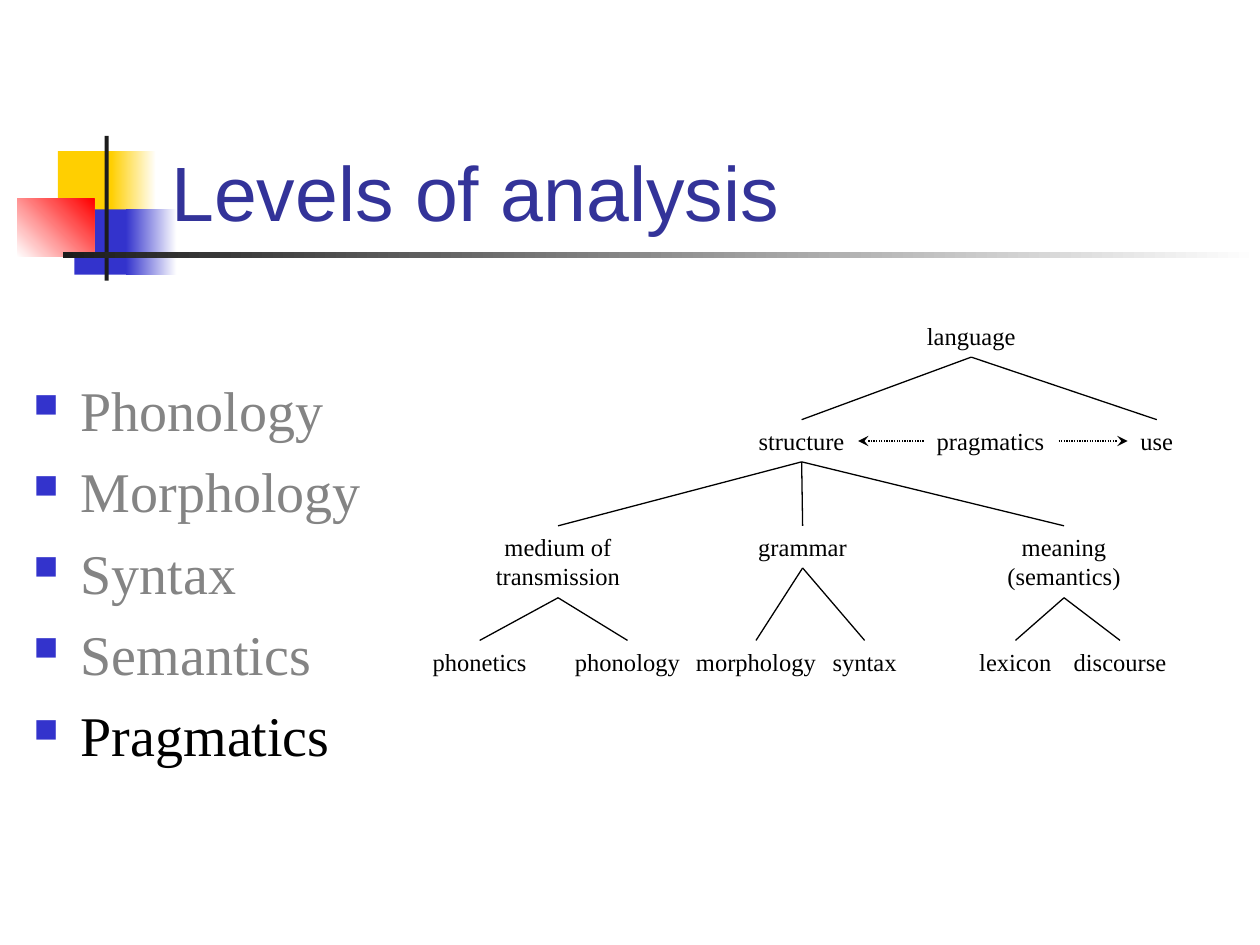
import dataclasses
import typing

import lxml.etree
import pptx
import pptx.dml.color
import pptx.enum.dml
import pptx.enum.shapes
import pptx.enum.text
import pptx.oxml.ns
import pptx.util

Cm = pptx.util.Cm
Pt = pptx.util.Pt
ALIGN = pptx.enum.text.PP_ALIGN
SERIF = "Times New Roman"


@dataclasses.dataclass
class Block:
    left: float
    top: float
    width: float
    height: float
    colors: tuple[str, ...]
    angle: float = 0


@dataclasses.dataclass
class Node:
    text: str
    center: float
    top: float
    width: float
    children: tuple["Node", ...] = ()

    @property
    def bottom(self) -> float:
        return self.top + 0.25 + 0.6 * len(self.text.split("\n"))


BLOCKS = [
    Block(1.17, 3.05, 1.22, 1.32, ("FFCF01",)),
    Block(2.24, 3.05, 0.91, 1.32, ("FFCF01", "FFFFFF")),
    Block(1.5, 4.22, 1.17, 1.32, ("3333CC",)),
    Block(2.54, 4.22, 1.02, 1.32, ("3333CC", "FFFFFF")),
    Block(0.35, 4.01, 1.55, 1.17, ("FFFFFF", "FF0000"), 45),
    Block(2.11, 2.74, 0.08, 2.92, ("1C1C1C",)),
    Block(1.27, 5.08, 24.13, 0.13, ("1C1C1C", "FFFFFF")),
]
TOPICS = {
    "Phonology": "848484",
    "Morphology": "848484",
    "Syntax": "848484",
    "Semantics": "848484",
    "Pragmatics": "000000",
}
LEVELS = (6.35, 8.46, 10.6, 12.91)

MEDIUM = Node("medium of\ntransmission", 11.25, LEVELS[2], 3.05, (
    Node("phonetics", 9.67, LEVELS[3], 2.41),
    Node("phonology", 12.65, LEVELS[3], 2.64),
))
GRAMMAR = Node("grammar", 16.18, LEVELS[2], 2.34, (
    Node("morphology", 15.24, LEVELS[3], 2.95),
    Node("syntax", 17.43, LEVELS[3], 1.83),
))
MEANING = Node("meaning\n(semantics)", 21.45, LEVELS[2], 2.82, (
    Node("lexicon", 20.47, LEVELS[3], 1.98),
    Node("discourse", 22.58, LEVELS[3], 2.39),
))
STRUCTURE = Node("structure", 16.16, LEVELS[1], 2.26, (MEDIUM, GRAMMAR, MEANING))
USE = Node("use", 23.32, LEVELS[1], 1.17)
LANGUAGE = Node("language", 19.58, LEVELS[0], 2.31, (STRUCTURE, USE))
PRAGMATICS = Node("pragmatics", 19.97, LEVELS[1], 2.69)


def rgb(color: str) -> pptx.dml.color.RGBColor:
    return pptx.dml.color.RGBColor.from_string(color)


def apply(target: typing.Any, values: dict[str, typing.Any]) -> None:
    for name, value in values.items():
        setattr(target, name, value)


def add_child(parent: typing.Any, tag: str, **attributes: str) -> None:
    element = lxml.etree.SubElement(parent, pptx.oxml.ns.qn(tag))
    for name, value in attributes.items():
        element.set(name, value)


def write(para: typing.Any, text: str, size: float, font: str, color: str) -> None:
    span = para.add_run()
    span.text = text
    apply(span.font, {"size": Pt(size), "name": font})
    span.font.color.rgb = rgb(color)


def draw_block(page: typing.Any, block: Block) -> None:
    shape = page.shapes.add_shape(
        pptx.enum.shapes.MSO_SHAPE.RECTANGLE,
        Cm(block.left), Cm(block.top), Cm(block.width), Cm(block.height),
    )
    shape.shadow.inherit = False
    shape.line.fill.background()
    if len(block.colors) == 1:
        shape.fill.solid()
        shape.fill.fore_color.rgb = rgb(block.colors[0])
        return
    shape.fill.gradient()
    shape.fill.gradient_angle = block.angle
    for stop, color in zip(shape.fill.gradient_stops, block.colors):
        stop.color.rgb = rgb(color)


def draw_title(page: typing.Any) -> None:
    title = page.shapes.title
    apply(title, {"left": Cm(3.2), "top": Cm(1.73), "width": Cm(21.64), "height": Cm(3.18)})
    apply(title.text_frame, {
        "vertical_anchor": pptx.enum.text.MSO_ANCHOR.BOTTOM,
        "auto_size": pptx.enum.text.MSO_AUTO_SIZE.NONE,
    })
    para = title.text_frame.paragraphs[0]
    para.alignment = ALIGN.LEFT
    write(para, "Levels of analysis", 44, "Arial", "333399")
    title.element.getparent().append(title.element)


def draw_topics(page: typing.Any) -> None:
    box = page.shapes.add_textbox(Cm(0.43), Cm(7.45), Cm(8.46), Cm(9.7))
    frame = box.text_frame
    frame.word_wrap = True
    for index, (topic, color) in enumerate(TOPICS.items()):
        para = frame.add_paragraph() if index else frame.paragraphs[0]
        para.space_before = Pt(8 if index else 0)
        properties = para._p.get_or_add_pPr()
        properties.set("marL", str(Cm(0.95)))
        properties.set("indent", str(Cm(-0.95)))
        add_child(properties, "a:buClr")
        add_child(properties[-1], "a:srgbClr", val="3333CC")
        add_child(properties, "a:buSzPct", val="60000")
        add_child(properties, "a:buChar", char="■")
        write(para, topic, 32, SERIF, color)


def draw_line(page: typing.Any, start: tuple[float, float], end: tuple[float, float],
              arrow: bool = False) -> None:
    line = page.shapes.add_connector(
        pptx.enum.shapes.MSO_CONNECTOR.STRAIGHT,
        Cm(start[0]), Cm(start[1]), Cm(end[0]), Cm(end[1]),
    )
    line.line.color.rgb = rgb("000000")
    line.line.width = Pt(0.75)
    if arrow:
        line.line.dash_style = pptx.enum.dml.MSO_LINE.ROUND_DOT
        add_child(line.line._get_or_add_ln(), "a:tailEnd", type="stealth")
    add_child(line.element.spPr, "a:effectLst")


def draw_node(page: typing.Any, node: Node) -> None:
    box = page.shapes.add_textbox(
        Cm(node.center - node.width / 2), Cm(node.top),
        Cm(node.width), Cm(node.bottom - node.top),
    )
    frame = box.text_frame
    apply(frame, {
        "word_wrap": False,
        "auto_size": pptx.enum.text.MSO_AUTO_SIZE.SHAPE_TO_FIT_TEXT,
    })
    for index, text in enumerate(node.text.split("\n")):
        para = frame.add_paragraph() if index else frame.paragraphs[0]
        para.alignment = ALIGN.CENTER
        write(para, text, 14, SERIF, "000000")
    for child in node.children:
        draw_node(page, child)
        draw_line(page, (node.center, node.bottom), (child.center, child.top))


def main() -> None:
    deck = pptx.Presentation()
    apply(deck, {"slide_width": Cm(25.4), "slide_height": Cm(19.05)})
    page = deck.slides.add_slide(deck.slide_layouts.get_by_name("Title Only"))
    for block in BLOCKS:
        draw_block(page, block)
    draw_title(page)
    draw_topics(page)
    draw_node(page, LANGUAGE)
    draw_node(page, PRAGMATICS)
    for start, end in ((18.62, 17.3), (21.34, 22.73)):
        draw_line(page, (start, 8.89), (end, 8.89), arrow=True)
    deck.save("out.pptx")


if __name__ == "__main__":
    main()
